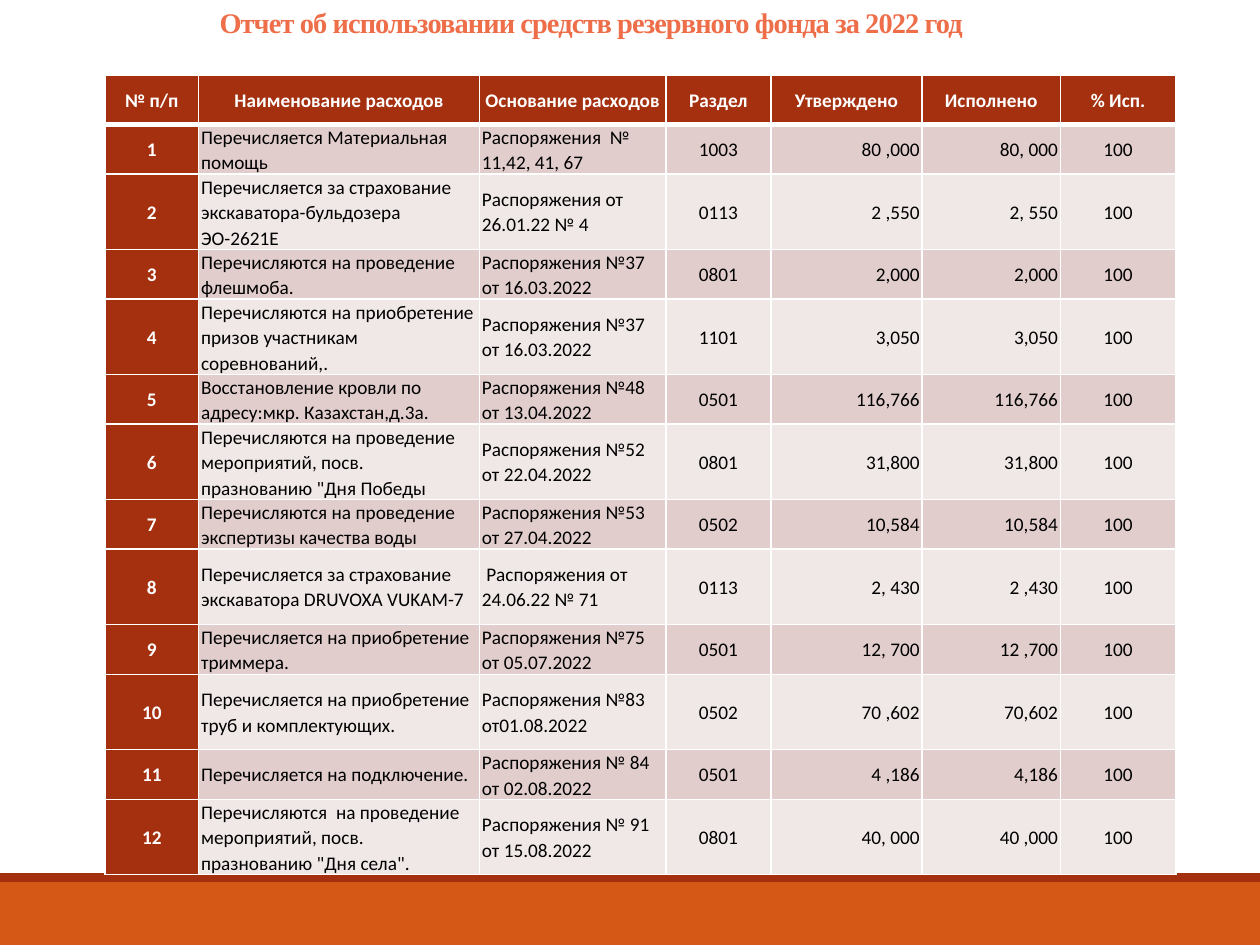
from lxml import etree
from pptx import Presentation
from pptx.dml.color import RGBColor
from pptx.enum import shapes, text
from pptx.oxml import ns
from pptx.util import Pt

HUES = {
    "white": "FFFFFF", "black": "000000", "rust": "A5300F",
    "orange": "D55816", "coral": "EE6E4A", "rose": "E1CDCC", "pale": "F0E8E7",
}
LEFT, MID, RIGHT = text.PP_ALIGN.LEFT, text.PP_ALIGN.CENTER, text.PP_ALIGN.RIGHT
ALIGNS = [MID, LEFT, LEFT, MID, RIGHT, RIGHT, MID]
WIDTHS = [53.5, 160.5, 106.5, 60, 86.5, 79, 66]
HEADS = ["№ п/п", "Наименование расходов", "Основание расходов", "Раздел",
         "Утверждено", "Исполнено", "% Исп."]
COSTS = [
    ("Перечисляется Материальная помощь",
     "Распоряжения  № 11,42, 41, 67", "1003", "80 ,000", "80, 000"),
    ("Перечисляется за страхование экскаватора-бульдозера ЭО-2621Е",
     "Распоряжения от 26.01.22 № 4", "0113", "2 ,550", "2, 550"),
    ("Перечисляются на проведение флешмоба.",
     "Распоряжения №37 от 16.03.2022", "0801", "2,000", "2,000"),
    ("Перечисляются на приобретение призов участникам соревнований,.",
     "Распоряжения №37 от 16.03.2022", "1101", "3,050", "3,050"),
    ("Восстановление кровли по адресу:мкр. Казахстан,д.3а.",
     "Распоряжения №48 от 13.04.2022", "0501", "116,766", "116,766"),
    ('Перечисляются на проведение мероприятий, посв. празнованию "Дня Победы',
     "Распоряжения №52 от 22.04.2022", "0801", "31,800", "31,800"),
    ("Перечисляются на проведение экспертизы качества воды",
     "Распоряжения №53 от 27.04.2022", "0502", "10,584", "10,584"),
    ("Перечисляется за страхование экскаватора DRUVOXA VUKAM-7",
     " Распоряжения от 24.06.22 № 71", "0113", "2, 430", "2 ,430"),
    ("Перечисляется на приобретение триммера.",
     "Распоряжения №75 от 05.07.2022", "0501", "12, 700", "12 ,700"),
    ("Перечисляется на приобретение труб и комплектующих.",
     "Распоряжения №83 от01.08.2022", "0502", "70 ,602", "70,602"),
    ("Перечисляется на подключение.",
     "Распоряжения № 84 от 02.08.2022", "0501", "4 ,186", "4,186"),
    ('Перечисляются  на проведение мероприятий, посв. празнованию "Дня села".',
     "Распоряжения № 91 от 15.08.2022", "0801", "40, 000", "40 ,000"),
]


def write(par, words, face, size, hue, bold):
    """Add one styled run to a paragraph."""
    run = par.add_run()
    run.text = words
    run.font.name, run.font.size, run.font.bold = face, Pt(size), bold
    run.font.color.rgb = RGBColor.from_string(HUES[hue])
    return run


def edge(cell, side, width):
    """Draw a white border on one side of a cell."""
    line = etree.SubElement(cell._tc.get_or_add_tcPr(), ns.qn("a:ln" + side),
                            w=str(Pt(width)))
    fill = etree.SubElement(line, ns.qn("a:solidFill"))
    etree.SubElement(fill, ns.qn("a:srgbClr"), val=HUES["white"])


deck = Presentation()
deck.slide_width, deck.slide_height = Pt(720), Pt(540)
slide = deck.slides.add_slide(deck.slide_layouts[6])

# Footer bands
for top, high, hue in [(504, 36, "orange"), (499, 5, "rust")]:
    band = slide.shapes.add_shape(shapes.MSO_SHAPE.RECTANGLE,
                                  Pt(0), Pt(top), Pt(720), Pt(high))
    band.shadow.inherit = False
    band.fill.solid()
    band.fill.fore_color.rgb = RGBColor.from_string(HUES[hue])
    band.line.fill.background()

# Title
title = slide.shapes.add_textbox(Pt(54), Pt(6), Pt(612), Pt(16)).text_frame
title.word_wrap = True
title.margin_left = Pt(71.5)
title.margin_right = title.margin_top = title.margin_bottom = 0
par = title.paragraphs[0]
par.line_spacing = 0.85
run = write(par, "Отчет об использовании средств резервного фонда за 2022 год",
            "Times New Roman", 16.2, "coral", True)
run.font._element.set("spc", "-50")

# Table of costs
rows = [HEADS] + [(str(num), *cost, "100") for num, cost in enumerate(COSTS, 1)]
highs = [28] + [28.5 if num % 2 else 43 for num in range(1, len(rows))]
grid = slide.shapes.add_table(len(rows), len(HEADS), Pt(60), Pt(43),
                              Pt(sum(WIDTHS)), Pt(sum(highs))).table
for col, width in zip(grid.columns, WIDTHS):
    col.width = Pt(width)
for num, (row, high) in enumerate(zip(rows, highs)):
    grid.rows[num].height = Pt(high)
    for pos, words in enumerate(row):
        cell = grid.cell(num, pos)
        strong = num == 0 or pos == 0
        cell.margin_left = cell.margin_right = Pt(1.4)
        cell.margin_top = cell.margin_bottom = 0
        cell.vertical_anchor = text.MSO_ANCHOR.MIDDLE
        for side in "LRTB":
            thick = (num, side) in [(0, "B"), (1, "T")]
            edge(cell, side, 3 if thick else 1)
        hue = "rust" if strong else "rose" if num % 2 else "pale"
        cell.fill.solid()
        cell.fill.fore_color.rgb = RGBColor.from_string(HUES[hue])
        par = cell.text_frame.paragraphs[0]
        par.alignment = MID if num == 0 else ALIGNS[pos]
        par.line_spacing = 1.07
        write(par, words, "Calibri", 11, "white" if strong else "black", strong)

deck.save("out.pptx")
